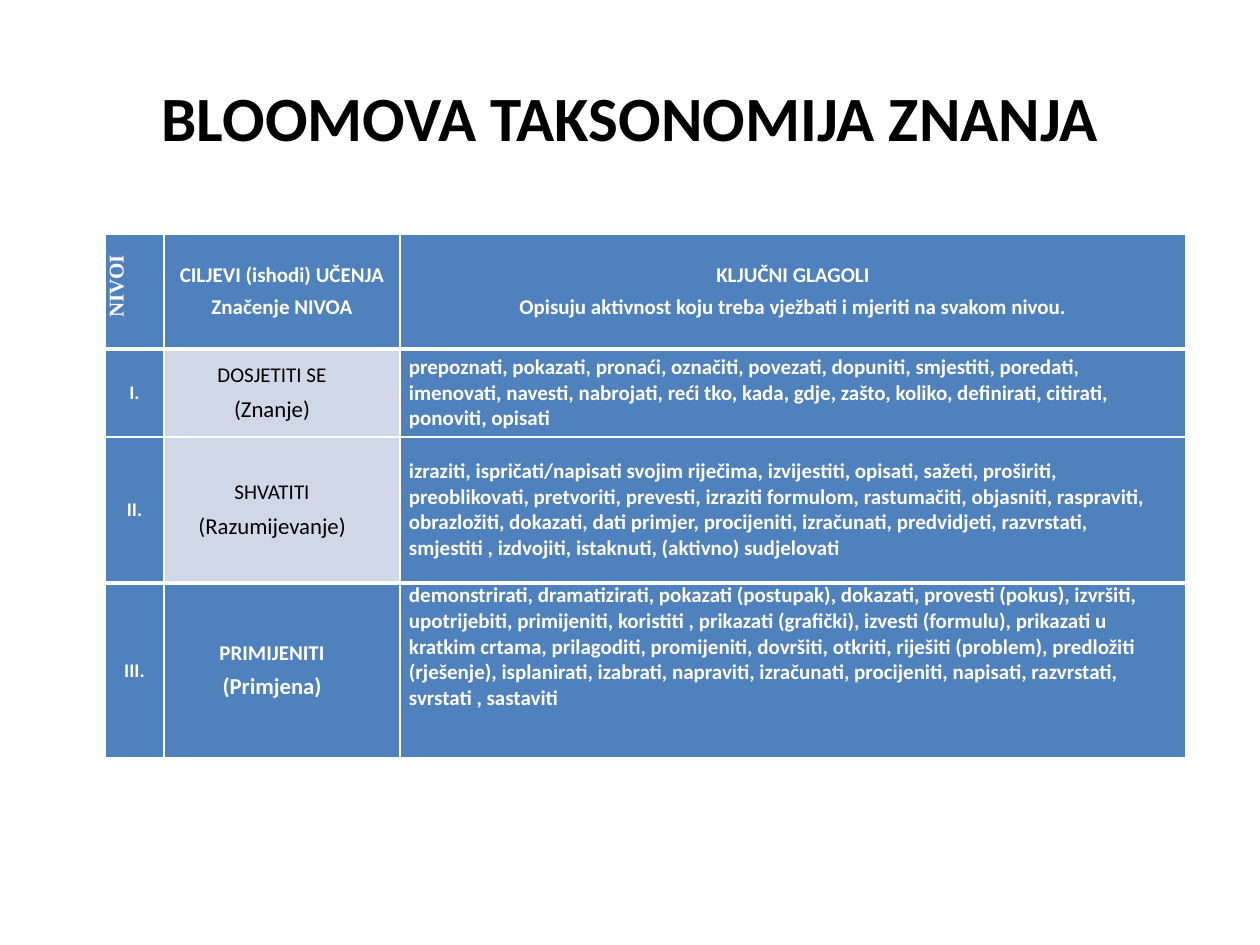
import pptx
import pptx.util
import pptx.dml.color
import pptx.enum.text
import pptx.oxml.ns
import lxml.etree

PX = 914400 / 126
BLUE, PALE, WHITE, BLACK = "4F81BD", "D0D8E8", "FFFFFF", "000000"
ALIGN = pptx.enum.text.PP_ALIGN
ANCHOR = pptx.enum.text.MSO_ANCHOR
COLS = (59, 236, 786)
ROWS = (115, 88, 146, 175)
HEADERS = (
    ("CILJEVI (ishodi) UČENJA", "Značenje NIVOA"),
    ("KLJUČNI GLAGOLI",
     "Opisuju aktivnost koju treba vježbati i mjeriti na svakom nivou."),
)
LEVELS = (
    ("I.", "DOSJETITI SE", "(Znanje)", PALE,
     "prepoznati, pokazati, pronaći, označiti, povezati, dopuniti, smjestiti, poredati, "
     "imenovati, navesti, nabrojati, reći tko, kada, gdje, zašto, koliko, definirati, "
     "citirati, ponoviti, opisati"),
    ("II.", "SHVATITI", "(Razumijevanje)", PALE,
     "izraziti, ispričati/napisati svojim riječima, izvijestiti, opisati, sažeti, proširiti, "
     "preoblikovati, pretvoriti, prevesti, izraziti formulom, rastumačiti, objasniti, "
     "raspraviti, obrazložiti, dokazati, dati primjer, procijeniti, izračunati, predvidjeti, "
     "razvrstati, smjestiti , izdvojiti, istaknuti, (aktivno) sudjelovati"),
    ("III.", "PRIMIJENITI", "(Primjena)", BLUE,
     "demonstrirati, dramatizirati, pokazati (postupak), dokazati, provesti (pokus), izvršiti, "
     "upotrijebiti, primijeniti, koristiti , prikazati (grafički), izvesti (formulu), "
     "prikazati u kratkim crtama, prilagoditi, promijeniti, dovršiti, otkriti, riješiti "
     "(problem), predložiti (rješenje), isplanirati, izabrati, napraviti, izračunati, "
     "procijeniti, napisati, razvrstati, svrstati , sastaviti"),
)


def px(n):
    """Turn px into EMU."""
    return pptx.util.Emu(round(n * PX))


def rgb(value):
    """Turn a hex string into a colour."""
    return pptx.dml.color.RGBColor.from_string(value)


def add_text(tf, text, size=12, color=WHITE, bold=True, font="Calibri",
             align=ALIGN.CENTER, space=2, left=0, right=0):
    """Write one paragraph, using the first one while it is empty."""
    p = tf.paragraphs[0] if not tf.text else tf.add_paragraph()
    p.alignment = align
    p.space_before = p.space_after = pptx.util.Pt(space)
    for side, width in (("marL", left), ("marR", right)):
        if width:
            p._p.get_or_add_pPr().set(side, str(px(width)))
    r = p.add_run()
    r.text = text
    r.font.size = pptx.util.Pt(size)
    r.font.bold = bold
    r.font.name = font
    r.font.color.rgb = rgb(color)


def format_cell(cell, fill, top=1, bottom=1, anchor=ANCHOR.MIDDLE):
    """Set the margins, anchor, white borders and fill of a cell."""
    cell.margin_left = cell.margin_right = px(9)
    cell.margin_top = cell.margin_bottom = 0
    cell.vertical_anchor = anchor
    tcPr = cell._tc.get_or_add_tcPr()
    qn = pptx.oxml.ns.qn
    for tag, width in (("a:lnL", 1), ("a:lnR", 1), ("a:lnT", top), ("a:lnB", bottom)):
        ln = lxml.etree.SubElement(tcPr, qn(tag), w=str(pptx.util.Pt(width)))
        solid = lxml.etree.SubElement(ln, qn("a:solidFill"))
        lxml.etree.SubElement(solid, qn("a:srgbClr"), val=WHITE)
    cell.fill.solid()
    cell.fill.fore_color.rgb = rgb(fill)


def add_title(s, x, y, w, h):
    """Place the slide title in its box."""
    tf = s.shapes.add_textbox(px(x), px(y), px(w), px(h)).text_frame
    tf.word_wrap = True
    tf.vertical_anchor = ANCHOR.MIDDLE
    add_text(tf, "BLOOMOVA TAKSONOMIJA ZNANJA", size=36, color=BLACK, space=0)


def fill_header(table):
    """Fill the header row."""
    for c in range(len(COLS)):
        format_cell(table.cell(0, c), BLUE, bottom=3)
    level = table.cell(0, 0)
    level._tc.get_or_add_tcPr().set("vert", "vert270")
    add_text(level.text_frame, "NIVOI", font="Times New Roman", left=10)
    for c, lines in enumerate(HEADERS, 1):
        for line in lines:
            add_text(table.cell(0, c).text_frame, line)


def fill_level(table, row, number, goal, meaning, fill, verbs):
    """Fill the row of one level of knowledge."""
    last = row == len(LEVELS)
    top = 3 if row in (1, len(LEVELS)) else 1
    bottom = 3 if row == len(LEVELS) - 1 else 1
    num, mid, end = (table.cell(row, c) for c in range(len(COLS)))
    format_cell(num, BLUE, top, bottom)
    format_cell(mid, fill, top, bottom)
    format_cell(end, BLUE, top, bottom, ANCHOR.TOP if last else ANCHOR.MIDDLE)
    add_text(num.text_frame, number, size=11)
    color = WHITE if last else BLACK
    add_text(mid.text_frame, goal, color=color, bold=last, right=20)
    add_text(mid.text_frame, meaning, size=13, color=color, bold=last)
    add_text(end.text_frame, verbs, align=ALIGN.LEFT, space=0)


def add_taxonomy(s, x, y):
    """Place the table of levels, goals and verbs."""
    table = s.shapes.add_table(len(ROWS), len(COLS), px(x), px(y),
                               px(sum(COLS)), px(sum(ROWS))).table
    for col, width in zip(table.columns, COLS):
        col.width = px(width)
    for row, height in zip(table.rows, ROWS):
        row.height = px(height)
    fill_header(table)
    for row, level in enumerate(LEVELS, 1):
        fill_level(table, row, *level)


def main():
    """Build and save the slide."""
    prs = pptx.Presentation()
    prs.slide_width, prs.slide_height = px(1260), px(945)
    s = prs.slides.add_slide(prs.slide_layouts[6])
    add_title(s, 63, 38, 1134, 157)
    add_taxonomy(s, 105, 234)
    prs.save("out.pptx")


if __name__ == "__main__":
    main()
